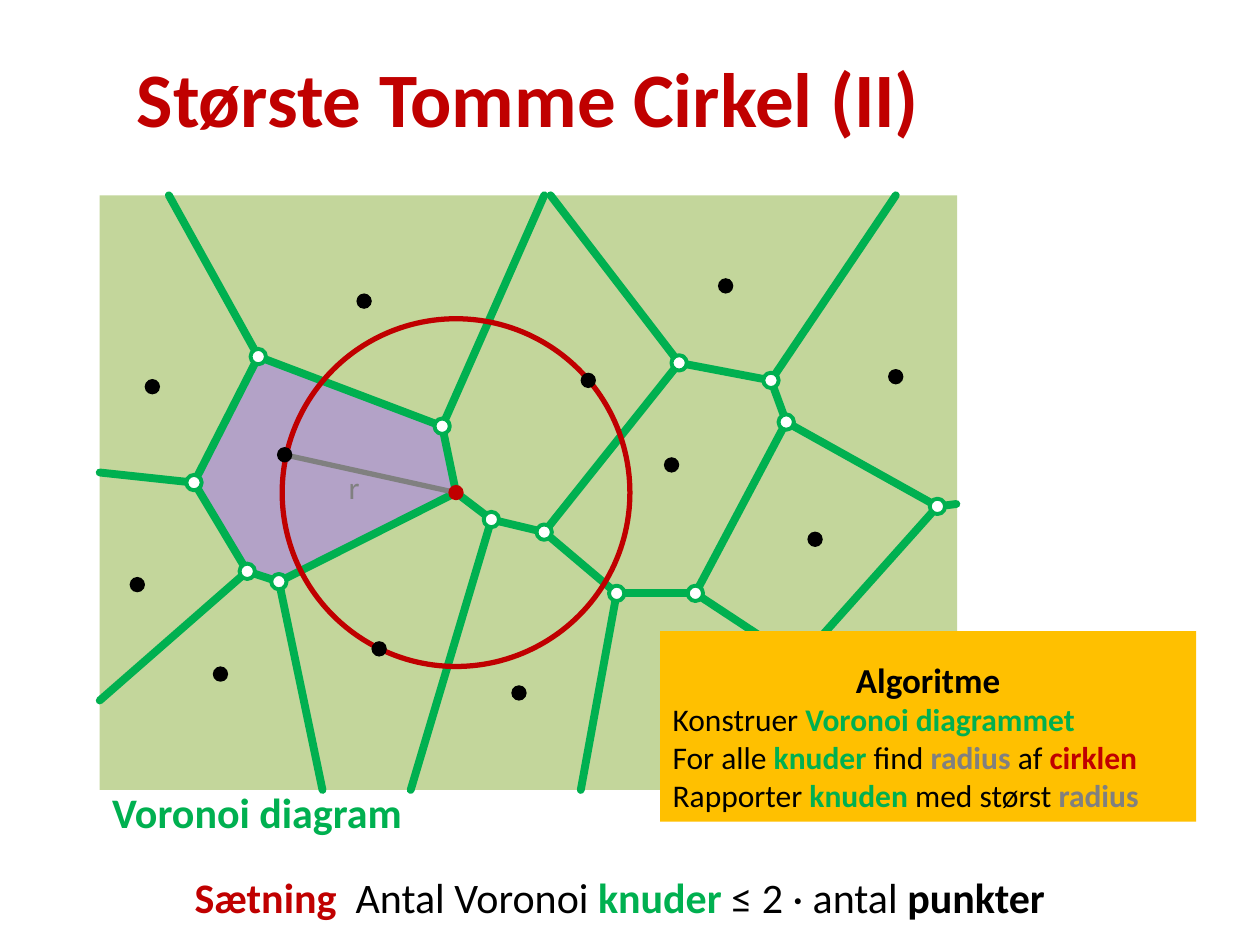
from pptx import Presentation
from pptx.dml.color import RGBColor
from pptx.enum.shapes import MSO_CONNECTOR as Conn, MSO_SHAPE as Kind
from pptx.enum.text import MSO_ANCHOR as Anchor, MSO_AUTO_SIZE as Auto, PP_ALIGN as Align
from pptx.oxml.ns import qn
from pptx.util import Pt
from lxml import etree

BLACK = RGBColor(0x00, 0x00, 0x00)
WHITE = RGBColor(0xFF, 0xFF, 0xFF)
GREEN = RGBColor(0x00, 0xB0, 0x50)
RED = RGBColor(0xC0, 0x00, 0x00)
GRAY = RGBColor(0x80, 0x80, 0x80)
FIELD = RGBColor(0xC3, 0xD6, 0x9B)
LILAC = RGBColor(0xB3, 0xA2, 0xC7)
BLUE = RGBColor(0x3A, 0x5F, 0x8C)
AMBER = RGBColor(0xFF, 0xC0, 0x00)

# Frame of the diagram
LEFT, TOP, RIGHT, BASE = 57, 111.6, 547, 451.4
DOT = 8.8

# Voronoi nodes; Q is the centre of the empty circle, Z lies under the box
NODES = {
    "A": (147.6, 203.8), "B": (110.9, 275.8), "C": (141.3, 326.5),
    "D": (159.4, 332.4), "E": (252.7, 243.6), "F": (280.8, 296.9),
    "G": (311, 304.1), "H": (352.4, 339.1), "I": (397.4, 339.1),
    "J": (449.3, 241.2), "K": (440.6, 217.4), "L": (388.1, 207.4),
    "M": (535.7, 289.4), "Q": (260.6, 281.5), "Z": (456.5, 378),
}
CELL = "BCDQEA"
INNER = "AB BC CD DQ AE EQ QF FG GH HI IJ JK KL LG JM IZ ZM".split()
RAYS = [
    ("A", (96.5, TOP)), ("B", (LEFT, 270)), ("C", (LEFT, 400.3)),
    ("D", (184.3, BASE)), ("F", (234.7, BASE)), ("H", (331.9, BASE)),
    ("E", (311, TOP)), ("L", (314.6, TOP)), ("K", (511.9, TOP)),
    ("M", (546.5, 288)),
]
NEAR = (162.7, 259.9)
POINTS = [
    (414.7, 163.4), (296.6, 396), (383.8, 265.7), (208.1, 172.1),
    (126, 385.2), (511.9, 215.3), (87.1, 221), (78.5, 334.1),
    NEAR, (216.7, 370.8), (336.2, 217.4), (465.8, 308.2),
]


def paint(shape, fill=None, line=None, width=1):
    shape.shadow.inherit = False
    if fill is None:
        shape.fill.background()
    else:
        shape.fill.solid()
        shape.fill.fore_color.rgb = fill
    if line is None:
        shape.line.fill.background()
    else:
        shape.line.color.rgb = line
        shape.line.width = Pt(width)


def add_rect(shapes, x, y, w, h, fill):
    rect = shapes.add_shape(Kind.RECTANGLE, Pt(x), Pt(y), Pt(w), Pt(h))
    paint(rect, fill)
    return rect


def add_disc(shapes, mid, size, fill=None, line=None, width=1):
    x, y = mid
    disc = shapes.add_shape(Kind.OVAL, Pt(x - size / 2), Pt(y - size / 2), Pt(size), Pt(size))
    paint(disc, fill, line, width)


def add_line(shapes, start, end, color, width):
    line = shapes.add_connector(Conn.STRAIGHT, *map(Pt, start + end))
    line.line.color.rgb = color
    line.line.width = Pt(width)
    line.line._get_or_add_ln().set("cap", "rnd")
    etree.SubElement(line._element.spPr, qn("a:effectLst"))


def add_cell(shapes):
    first, *rest = [tuple(map(Pt, NODES[name])) for name in CELL]
    build = shapes.build_freeform(*first)
    build.add_line_segments(rest, close=True)
    paint(build.convert_to_shape(), LILAC, BLUE, 2)


def add_para(frame, runs, size, align=Align.LEFT, first=True):
    para = frame.paragraphs[0] if first else frame.add_paragraph()
    para.alignment = align
    for text, color, bold in runs:
        run = para.add_run()
        run.text = text
        run.font.name = "Calibri"
        run.font.size = Pt(size)
        run.font.bold = bold
        run.font.color.rgb = color
    return para


def add_text(shapes, x, y, w, h, runs, size, align=Align.LEFT, anchor=Anchor.TOP):
    frame = shapes.add_textbox(Pt(x), Pt(y), Pt(w), Pt(h)).text_frame
    frame.word_wrap = True
    frame.vertical_anchor = anchor
    add_para(frame, runs, size, align)


def add_steps(shapes):
    frame = add_rect(shapes, 377.3, 360.7, 306.2, 108.9, AMBER).text_frame
    frame.word_wrap = True
    frame.auto_size = Auto.SHAPE_TO_FIT_TEXT
    frame.vertical_anchor = Anchor.TOP
    head = add_para(frame, [("Algoritme", BLACK, True)], 20, Align.CENTER)
    head.line_spacing = 1.5
    steps = [
        [("Konstruer ", BLACK, False), ("Voronoi diagrammet", GREEN, True)],
        [("For alle ", BLACK, False), ("knuder ", GREEN, True), ("find ", BLACK, False),
         ("radius", GRAY, True), (" af ", BLACK, False), ("cirklen", RED, True)],
        [("Rapporter ", BLACK, False), ("knuden ", GREEN, True),
         ("med størst ", BLACK, False), ("radius", GRAY, True)],
    ]
    for runs in steps:
        add_para(frame, runs, 18, first=False)


def main():
    deck = Presentation()
    deck.slide_width, deck.slide_height = Pt(720), Pt(540)
    shapes = deck.slides.add_slide(deck.slide_layouts[6]).shapes

    # Field and highlighted cell
    add_rect(shapes, LEFT, TOP, RIGHT - LEFT, BASE - TOP, FIELD)
    add_cell(shapes)

    # Voronoi edges
    edges = shapes.add_group_shape().shapes
    for a, b in INNER:
        add_line(edges, NODES[a], NODES[b], GREEN, 4.5)
    for name, end in RAYS:
        add_line(edges, NODES[name], end, GREEN, 4.5)
    add_line(shapes, NODES["Q"], NEAR, GRAY, 3)

    # Title and caption
    add_text(shapes, LEFT, 10, 490, 90, [("Største Tomme Cirkel (II)", RED, True)],
             44, Align.CENTER, Anchor.MIDDLE)
    add_text(shapes, LEFT, 445.7, 490, 36, [("Voronoi diagram", GREEN, True)], 24)

    # Nodes, empty circle and points
    rings = shapes.add_group_shape().shapes
    for name, mid in NODES.items():
        if name not in "QZ":
            add_disc(rings, mid, DOT, WHITE, GREEN, 2.25)
    add_disc(shapes, NODES["Q"], DOT, RED)
    add_disc(shapes, NODES["Q"], 198.7, None, RED, 3)
    dots = shapes.add_group_shape().shapes
    for mid in POINTS:
        add_disc(dots, mid, DOT, BLACK)

    # Algorithm, theorem and radius label
    add_steps(shapes)
    add_text(shapes, 19.4, 494.6, 669.6, 36, [
        ("Sætning  ", RED, True), ("Antal Voronoi ", BLACK, False), ("knuder", GREEN, True),
        (" ≤ 2 · antal ", BLACK, False), ("punkter", BLACK, True)], 24, Align.CENTER)
    add_text(shapes, 192.2, 264.2, 37.4, 28.8, [("r", GRAY, False)], 18)

    deck.save("out.pptx")


if __name__ == "__main__":
    main()
